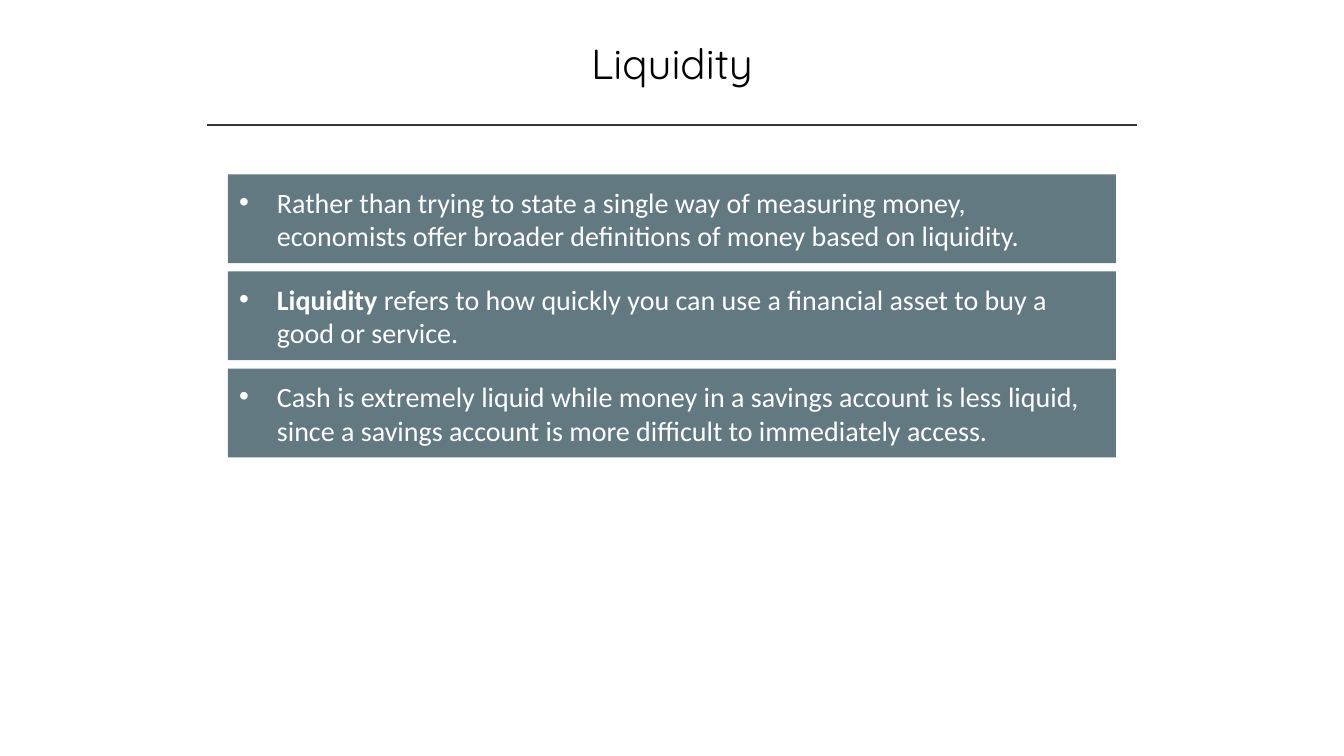
from lxml.etree import SubElement
from pptx import Presentation
from pptx.dml.color import RGBColor as RGB
from pptx.enum.shapes import MSO_CONNECTOR as Connector, MSO_SHAPE as Shape
from pptx.enum.text import MSO_ANCHOR as Anchor, MSO_AUTO_SIZE as AutoSize, PP_ALIGN as Align
from pptx.oxml.ns import qn
from pptx.util import Pt

TITLE = "Liquidity"
# Each point is a list of (text, bold) spans.
POINTS = [
    [("Rather than trying to state a single way of measuring money, economists offer "
      "broader definitions of money based on liquidity.", False)],
    [("Liquidity", True),
     (" refers to how quickly you can use a financial asset to buy a good or service.", False)],
    [("Cash is extremely liquid while money in a savings account is less liquid, "
      "since a savings account is more difficult to immediately access.", False)],
]

THEME = {
    "title_font": "Quicksand", "title_size": Pt(30), "title_color": RGB(0, 0, 0),
    "body_font": "Calibri", "body_size": Pt(20), "body_color": RGB(255, 255, 255),
    "bar": RGB(0x62, 0x79, 0x81), "rule": RGB(0x32, 0x35, 0x42),
}

SLIDE_WIDTH, SLIDE_HEIGHT = 960, 540
TITLE_WIDTH, TITLE_TOP, TITLE_HEIGHT = 720, 23, 44
RULE_WIDTH, RULE_TOP = 664, 89.4
BAR_WIDTH, BAR_HEIGHT, BAR_TOP, BAR_PITCH = 634.4, 63.4, 124.5, 69.4
BULLET_INDENT = 27


def centred_left(width):
    return (SLIDE_WIDTH - width) / 2


def style_font(font, role):
    font.name = THEME[f"{role}_font"]
    font.size = THEME[f"{role}_size"]
    font.color.rgb = THEME[f"{role}_color"]


def add_bullet(para):
    properties = para._p.get_or_add_pPr()
    properties.set("marL", str(Pt(BULLET_INDENT)))
    properties.set("indent", str(-Pt(BULLET_INDENT)))
    SubElement(properties, qn("a:buFont")).set("typeface", "Arial")
    SubElement(properties, qn("a:buChar")).set("char", "•")


def add_title(slide):
    title = slide.shapes.title
    title.left, title.top = Pt(centred_left(TITLE_WIDTH)), Pt(TITLE_TOP)
    title.width, title.height = Pt(TITLE_WIDTH), Pt(TITLE_HEIGHT)
    frame = title.text_frame
    frame.text = TITLE
    frame.auto_size = AutoSize.NONE
    frame.vertical_anchor = Anchor.MIDDLE
    para = frame.paragraphs[0]
    para.alignment = Align.CENTER
    style_font(para.font, "title")


def add_rule(slide):
    left = centred_left(RULE_WIDTH)
    rule = slide.shapes.add_connector(
        Connector.STRAIGHT, Pt(left), Pt(RULE_TOP), Pt(left + RULE_WIDTH), Pt(RULE_TOP))
    rule.line.color.rgb = THEME["rule"]
    rule.line.width = Pt(1)
    SubElement(rule._element.spPr, qn("a:effectLst"))


def add_bar(slide, top, spans):
    bar = slide.shapes.add_shape(
        Shape.RECTANGLE, Pt(centred_left(BAR_WIDTH)), Pt(top), Pt(BAR_WIDTH), Pt(BAR_HEIGHT))
    bar.shadow.inherit = False
    bar.fill.solid()
    bar.fill.fore_color.rgb = THEME["bar"]
    bar.line.fill.background()
    frame = bar.text_frame
    frame.word_wrap = True
    frame.vertical_anchor = Anchor.MIDDLE
    frame.margin_left, frame.margin_right = Pt(8), Pt(20)
    para = frame.paragraphs[0]
    para.alignment = Align.LEFT
    style_font(para.font, "body")
    add_bullet(para)
    for text, bold in spans:
        span = para.add_run()
        span.text = text
        span.font.bold = bold


def main():
    deck = Presentation()
    deck.slide_width, deck.slide_height = Pt(SLIDE_WIDTH), Pt(SLIDE_HEIGHT)
    slide = deck.slides.add_slide(deck.slide_layouts.get_by_name("Title Only"))
    add_title(slide)
    add_rule(slide)
    for index, spans in enumerate(POINTS):
        add_bar(slide, BAR_TOP + index * BAR_PITCH, spans)
    deck.save("out.pptx")


if __name__ == "__main__":
    main()
